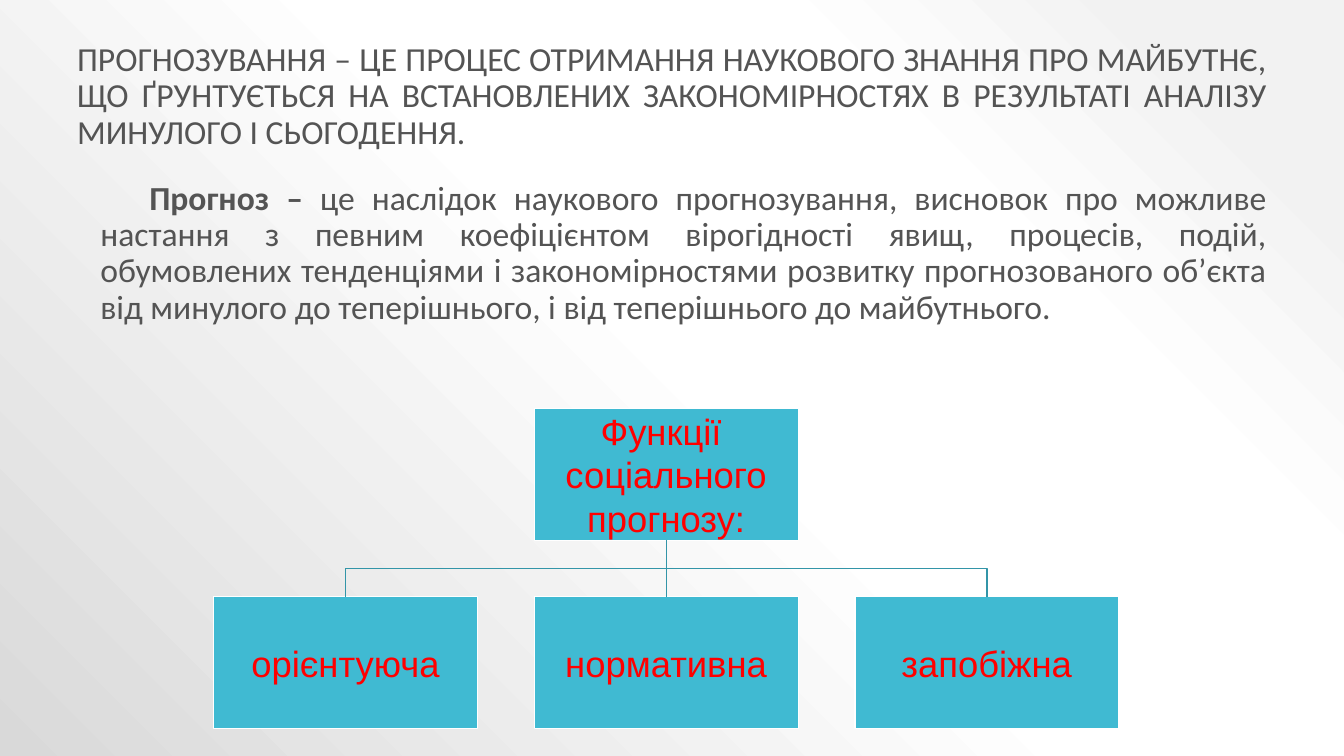
from pptx import Presentation
from pptx.dml.color import RGBColor
from pptx.enum.shapes import MSO_CONNECTOR, MSO_SHAPE
from pptx.enum.text import MSO_ANCHOR, PP_ALIGN
from pptx.oxml import parse_xml
from pptx.oxml.ns import nsdecls
from pptx.util import Pt

STRAIGHT, RECT = MSO_CONNECTOR.STRAIGHT, MSO_SHAPE.RECTANGLE
TOP, MIDDLE, BOTTOM = MSO_ANCHOR.TOP, MSO_ANCHOR.MIDDLE, MSO_ANCHOR.BOTTOM
CENTER, JUSTIFY = PP_ALIGN.CENTER, PP_ALIGN.JUSTIFY

COLORS = {"text": "545454", "box": "40BAD2", "edge": "FFFFFF",
          "line": "3395A8", "label": "FF0000"}
BACKGROUND = [(10, "F2F2F2"), (28, "FFFFFF"), (48, "FFFFFF"), (100, "D9D9D9")]

TITLE = ("ПРОГНОЗУВАННЯ – ЦЕ ПРОЦЕС ОТРИМАННЯ НАУКОВОГО ЗНАННЯ ПРО МАЙБУТНЄ, "
         "ЩО ҐРУНТУЄТЬСЯ НА ВСТАНОВЛЕНИХ ЗАКОНОМІРНОСТЯХ В РЕЗУЛЬТАТІ АНАЛІЗУ "
         "МИНУЛОГО І СЬОГОДЕННЯ.")
TERM = "Прогноз –"
DEFINITION = (" це наслідок наукового прогнозування, висновок про можливе "
              "настання з певним коефіцієнтом вірогідності явищ, процесів, подій, "
              "обумовлених тенденціями і закономірностями розвитку прогнозованого "
              "об’єкта від минулого до теперішнього, і від теперішнього до майбутнього.")
ROOT = ["Функції ", "соціального прогнозу:"]
FUNCTIONS = ["орієнтуюча", "нормативна", "запобіжна"]

# Chart grid, in points
BOX_W, BOX_H, STEP = 188.6, 94.3, 229
LEFT, ROOT_TOP, ROW_TOP = 152.6, 291.6, 426.2

BODY_FONT = {"name": "Calibri", "size": Pt(24)}
LABEL_FONT = {"name": "Arial", "size": Pt(26)}


def rgb(name):
    return RGBColor.from_string(COLORS[name])


def apply(target, values):
    for key, value in values.items():
        setattr(target, key, value)


def add_run(p, text, font, color, bold=False):
    r = p.add_run()
    r.text = text
    apply(r.font, {**font, "bold": bold})
    r.font.color.rgb = rgb(color)


def set_background(s):
    stops = "".join(f'<a:gs pos="{pos * 1000}"><a:srgbClr val="{color}"/></a:gs>'
                    for pos, color in BACKGROUND)
    s.element.cSld.insert(0, parse_xml(
        f'<p:bg {nsdecls("p", "a")}><p:bgPr><a:gradFill rotWithShape="1">'
        f'<a:gsLst>{stops}</a:gsLst><a:path path="circle">'
        '<a:fillToRect l="100000" b="100000"/></a:path></a:gradFill>'
        '<a:effectLst/></p:bgPr></p:bg>'))


def add_paragraph_box(s, top, height, anchor, parts, left_margin=0, first_indent=0):
    tf = s.shapes.add_textbox(Pt(48), Pt(top), Pt(864), Pt(height)).text_frame
    apply(tf, {"word_wrap": True, "vertical_anchor": anchor})
    p = tf.paragraphs[0]
    apply(p, {"alignment": JUSTIFY, "line_spacing": 0.9})
    pPr = p._p.get_or_add_pPr()
    pPr.set("marL", str(Pt(left_margin)))
    pPr.set("indent", str(Pt(first_indent)))
    for text, bold in parts:
        add_run(p, text, BODY_FONT, "text", bold)


def add_box(s, left, top, lines):
    sp = s.shapes.add_shape(RECT, Pt(left), Pt(top), Pt(BOX_W), Pt(BOX_H))
    sp.shadow.inherit = False
    sp.fill.solid()
    sp.fill.fore_color.rgb = rgb("box")
    sp.line.color.rgb = rgb("edge")
    sp.line.width = Pt(1)
    tf = sp.text_frame
    apply(tf, {"word_wrap": True, "vertical_anchor": MIDDLE})
    apply(tf, dict.fromkeys(("margin_left", "margin_right", "margin_top",
                             "margin_bottom"), Pt(1.3)))
    for i, line in enumerate(lines):
        p = tf.add_paragraph() if i else tf.paragraphs[0]
        p.alignment = CENTER
        add_run(p, line, LABEL_FONT, "label")
    return sp


def style_line(shape):
    shape.line.color.rgb = rgb("line")
    shape.line.width = Pt(1)


def add_trunk(s, upper, lower):
    c = s.shapes.add_connector(STRAIGHT, 0, 0, 0, 0)
    c.begin_connect(upper, 2)
    c.end_connect(lower, 0)
    style_line(c)
    c._element.spPr.append(parse_xml(f'<a:effectLst {nsdecls("a")}/>'))


def add_elbow(s, upper, lower):
    x1, y1 = upper.left + upper.width // 2, upper.top + upper.height
    x2, y2 = lower.left + lower.width // 2, lower.top
    y_mid = (y1 + y2) // 2
    builder = s.shapes.build_freeform(x1, y1)
    builder.add_line_segments([(x1, y_mid), (x2, y_mid), (x2, y2)], close=False)
    sp = builder.convert_to_shape()
    sp.shadow.inherit = False
    sp.fill.background()
    style_line(sp)


def main():
    prs = Presentation()
    prs.slide_width, prs.slide_height = Pt(960), Pt(540)
    s = prs.slides.add_slide(prs.slide_layouts[6])
    set_background(s)

    # Definitions
    add_paragraph_box(s, 21.6, 90, BOTTOM, [(TITLE, False)])
    add_paragraph_box(s, 126, 171.4, TOP, [(TERM, True), (DEFINITION, False)],
                      left_margin=16.6, first_indent=35)

    # Functions of the forecast
    root = add_box(s, LEFT + STEP, ROOT_TOP, ROOT)
    left, middle, right = [add_box(s, LEFT + i * STEP, ROW_TOP, [name])
                           for i, name in enumerate(FUNCTIONS)]
    add_trunk(s, root, middle)
    for box in (left, right):
        add_elbow(s, root, box)

    prs.save("out.pptx")


if __name__ == "__main__":
    main()
